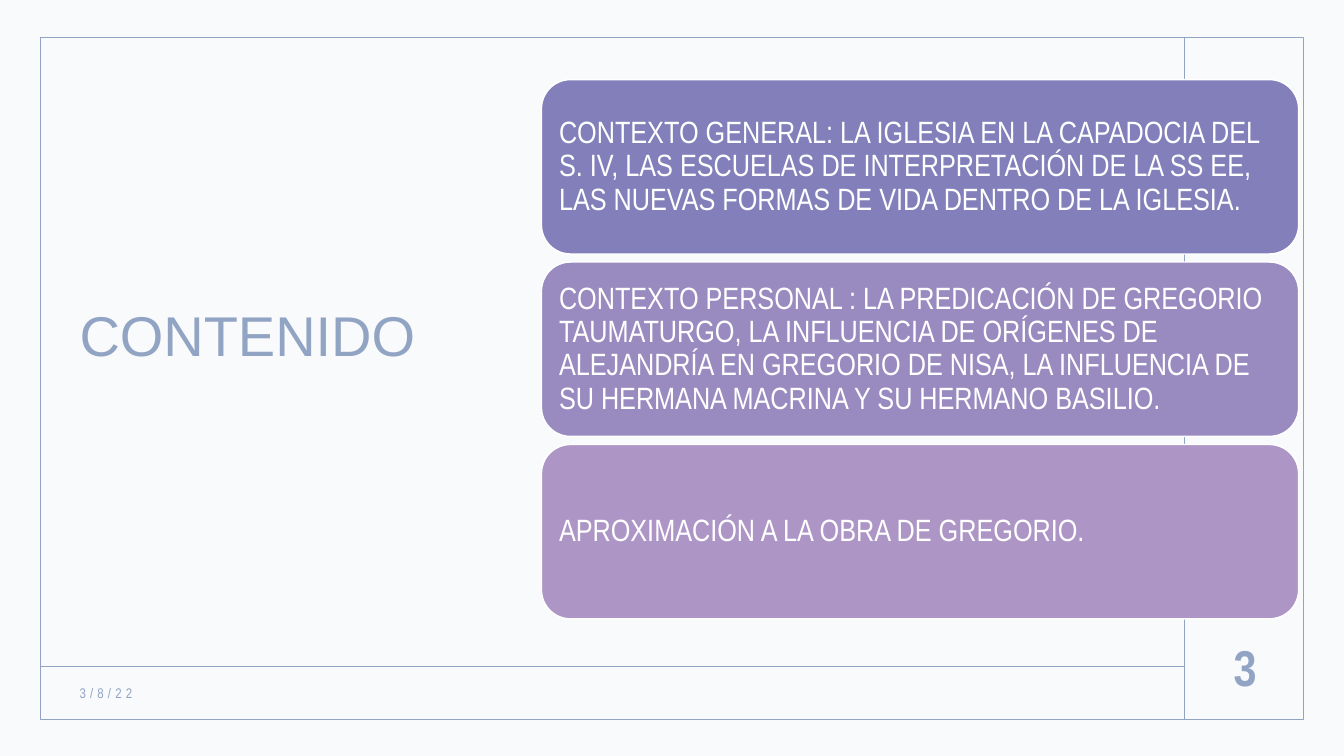
from lxml import etree
from pptx import Presentation
from pptx.dml.color import RGBColor
from pptx.enum.shapes import MSO_CONNECTOR as Connector, MSO_SHAPE as Shape
from pptx.enum.text import MSO_ANCHOR as Anchor, PP_ALIGN as Align
from pptx.oxml.ns import qn
from pptx.util import Inches, Pt

WIDTH, HEIGHT = 13.33, 7.5


def color(hex_value):
    return RGBColor.from_string(hex_value)


class SlideBuilder:
    """Hold the style and the current slide, and add its elements."""

    accent = "92A4C4"
    white = "FFFFFF"
    heading_font = "Arial"
    body_font = "Arial Narrow"

    def __init__(self, slide):
        self.slide = slide

    def panel(self, left, top, width, height, fill=None, line=None,
              alpha=None, shape=Shape.RECTANGLE):
        panel = self.slide.shapes.add_shape(
            shape, Inches(left), Inches(top), Inches(width), Inches(height))
        panel.shadow.inherit = False
        if fill:
            panel.fill.solid()
            panel.fill.fore_color.rgb = color(fill)
        else:
            panel.fill.background()
        if line:
            panel.line.color.rgb = color(line)
            panel.line.width = Pt(1)
        else:
            panel.line.fill.background()
        if alpha:
            tone = panel._element.spPr.find(".//" + qn("a:srgbClr"))
            etree.SubElement(tone, qn("a:alpha"), val=str(alpha * 1000))
        return panel

    def rule(self, x1, y1, x2, y2):
        rule = self.slide.shapes.add_connector(
            Connector.STRAIGHT, Inches(x1), Inches(y1), Inches(x2), Inches(y2))
        rule.line.color.rgb = color(self.accent)
        rule.line.width = Pt(1)
        etree.SubElement(rule._element.spPr, qn("a:effectLst"))

    def set_text(self, frame, text, size, font, tone, bold=False,
                 align=Align.LEFT, anchor=Anchor.MIDDLE, spacing=None):
        frame.word_wrap = True
        frame.vertical_anchor = anchor
        paragraph = frame.paragraphs[0]
        paragraph.text = text
        paragraph.alignment = align
        paragraph.line_spacing = spacing
        paragraph.font.size = Pt(size)
        paragraph.font.name = font
        paragraph.font.bold = bold
        paragraph.font.color.rgb = color(tone)
        return paragraph

    def label(self, left, top, width, height, text, size, font, **style):
        box = self.slide.shapes.add_textbox(
            Inches(left), Inches(top), Inches(width), Inches(height))
        return self.set_text(box.text_frame, text, size, font, self.accent, **style)

    def card(self, left, top, width, height, fill, text):
        card = self.panel(left, top, width, height, fill, self.white,
                          shape=Shape.ROUNDED_RECTANGLE)
        frame = card.text_frame
        frame.margin_left = frame.margin_right = Inches(0.09)
        frame.margin_top = frame.margin_bottom = Inches(0.09)
        self.set_text(frame, text, 22, self.body_font, self.white, spacing=0.9)


def main():
    deck = Presentation()
    deck.slide_width, deck.slide_height = Inches(WIDTH), Inches(HEIGHT)
    builder = SlideBuilder(deck.slides.add_slide(deck.slide_layouts[6]))

    builder.panel(0, 0, WIDTH, HEIGHT, fill=builder.white)
    builder.panel(0, 0, WIDTH, HEIGHT, fill=builder.accent, alpha=5)
    builder.panel(0.4, 0.37, 12.53, 6.77, line=builder.accent)
    builder.label(0.69, 3.01, 4.45, 0.96, "CONTENIDO", 40,
                  builder.heading_font, anchor=Anchor.TOP, spacing=0.9)
    builder.rule(11.75, 0.37, 11.75, 7.13)
    builder.rule(0.41, 6.61, 11.75, 6.61)

    date = builder.label(0.69, 6.72, 3.45, 0.31, "3/8/22", 10, builder.body_font)
    date.runs[0].font._element.set("spc", "300")
    builder.label(11.83, 6.2, 1.04, 0.83, "3", 36, builder.body_font,
                  bold=True, align=Align.CENTER)

    topics = [
        ("827FBA", "CONTEXTO GENERAL: LA IGLESIA EN LA CAPADOCIA DEL S. IV, "
                   "LAS ESCUELAS DE INTERPRETACIÓN DE LA SS EE, LAS NUEVAS "
                   "FORMAS DE VIDA DENTRO DE LA IGLESIA."),
        ("998BC0", "CONTEXTO PERSONAL : LA PREDICACIÓN DE GREGORIO TAUMATURGO, "
                   "LA INFLUENCIA DE ORÍGENES DE ALEJANDRÍA EN GREGORIO DE NISA, "
                   "LA INFLUENCIA DE SU HERMANA MACRINA Y SU HERMANO BASILIO."),
        ("AD96C6", "APROXIMACIÓN A LA OBRA DE GREGORIO."),
    ]
    for row, (fill, topic) in enumerate(topics):
        builder.card(5.37, 0.79 + row * 1.81, 7.51, 1.73, fill, topic)

    deck.save("out.pptx")


if __name__ == "__main__":
    main()
